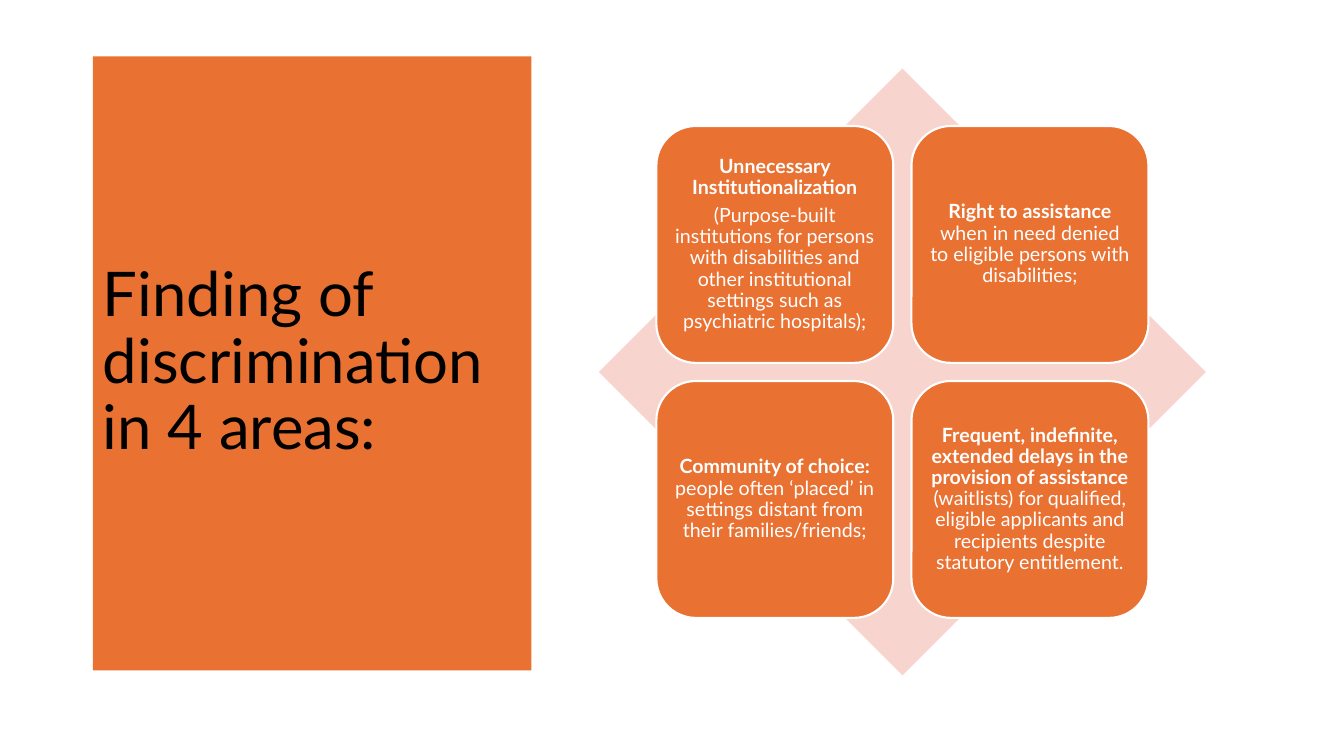
from pptx import Presentation
from pptx.dml.color import RGBColor
from pptx.enum.shapes import MSO_SHAPE as Shape
from pptx.enum.text import MSO_ANCHOR as Anchor, MSO_AUTO_SIZE as AutoSize, PP_ALIGN as Align
from pptx.util import Inches, Pt

COLOURS = {"orange": "E97132", "pink": "F7D5CE", "white": "FFFFFF", "black": "000000"}
FONT = "Lato"

# Each area is a list of paragraphs; each paragraph is a list of (text, bold)
AREAS = [
    [[("Unnecessary Institutionalization", True)],
     [("(Purpose-built institutions for persons with disabilities and other "
       "institutional settings such as psychiatric hospitals);", False)]],
    [[("Right to assistance ", True),
      ("when in need denied to eligible persons with disabilities;", False)]],
    [[("Community of choice: ", True),
      ("people often ‘placed’ in settings distant from their families/friends;", False)]],
    [[("Frequent, indefinite, extended delays in the provision of assistance ", True),
      ("(waitlists) for qualified, eligible applicants and recipients despite "
       "statutory entitlement.", False)]],
]


def colour(name):
    return RGBColor.from_string(COLOURS[name])


def apply_format(target, values):
    for name, value in values.items():
        setattr(target, name, value)


def paint(shape, fill):
    shape.fill.solid()
    shape.fill.fore_color.rgb = colour(fill)


def add_span(para, text, size, ink, bold=False):
    span = para.add_run()
    span.text = text
    apply_format(span.font, {"name": FONT, "size": Pt(size), "bold": bold})
    span.font.color.rgb = colour(ink)


def place_title(page, left, top, width, height):
    title = page.shapes.title
    apply_format(title, {"left": Inches(left), "top": Inches(top),
                         "width": Inches(width), "height": Inches(height)})
    paint(title, "orange")
    apply_format(title.text_frame, {"word_wrap": True, "auto_size": AutoSize.NONE,
                                    "vertical_anchor": Anchor.MIDDLE})
    para = title.text_frame.paragraphs[0]
    apply_format(para, {"alignment": Align.LEFT, "line_spacing": 0.9, "space_before": Pt(0)})
    add_span(para, "Finding of discrimination in 4 areas:", 44, "black")


def add_card(page, paragraphs, left, top, side):
    card = page.shapes.add_shape(Shape.ROUNDED_RECTANGLE, Inches(left), Inches(top),
                                 Inches(side), Inches(side))
    card.shadow.inherit = False
    paint(card, "orange")
    card.line.color.rgb = colour("white")
    card.line.width = Pt(1.5)
    frame = card.text_frame
    inset = Inches(0.06)
    apply_format(frame, {"word_wrap": True, "vertical_anchor": Anchor.MIDDLE,
                         "margin_left": inset, "margin_right": inset,
                         "margin_top": inset, "margin_bottom": inset})
    for index, spans in enumerate(paragraphs):
        para = frame.add_paragraph() if index else frame.paragraphs[0]
        apply_format(para, {"alignment": Align.CENTER, "line_spacing": 0.9,
                            "space_after": Pt(5)})
        for text, bold in spans:
            add_span(para, text, 14, "white", bold)


def add_matrix(page, left, top, size):
    # Diamond behind the cards
    diamond = page.shapes.add_shape(Shape.DIAMOND, Inches(left), Inches(top),
                                    Inches(size), Inches(size))
    diamond.shadow.inherit = False
    paint(diamond, "pink")
    diamond.line.fill.background()

    # Two by two grid of cards, centred on the diamond
    side, gap = 2.35, 0.18
    margin = (size - 2 * side - gap) / 2
    for index, paragraphs in enumerate(AREAS):
        row, column = divmod(index, 2)
        add_card(page, paragraphs, left + margin + column * (side + gap),
                 top + margin + row * (side + gap), side)


def main():
    deck = Presentation()
    deck.slide_width, deck.slide_height = Inches(13.33), Inches(7.5)
    page = deck.slides.add_slide(deck.slide_layouts[5])
    place_title(page, 0.92, 0.56, 4.35, 6.09)
    add_matrix(page, 5.94, 0.68, 6.02)
    deck.save("out.pptx")


if __name__ == "__main__":
    main()
